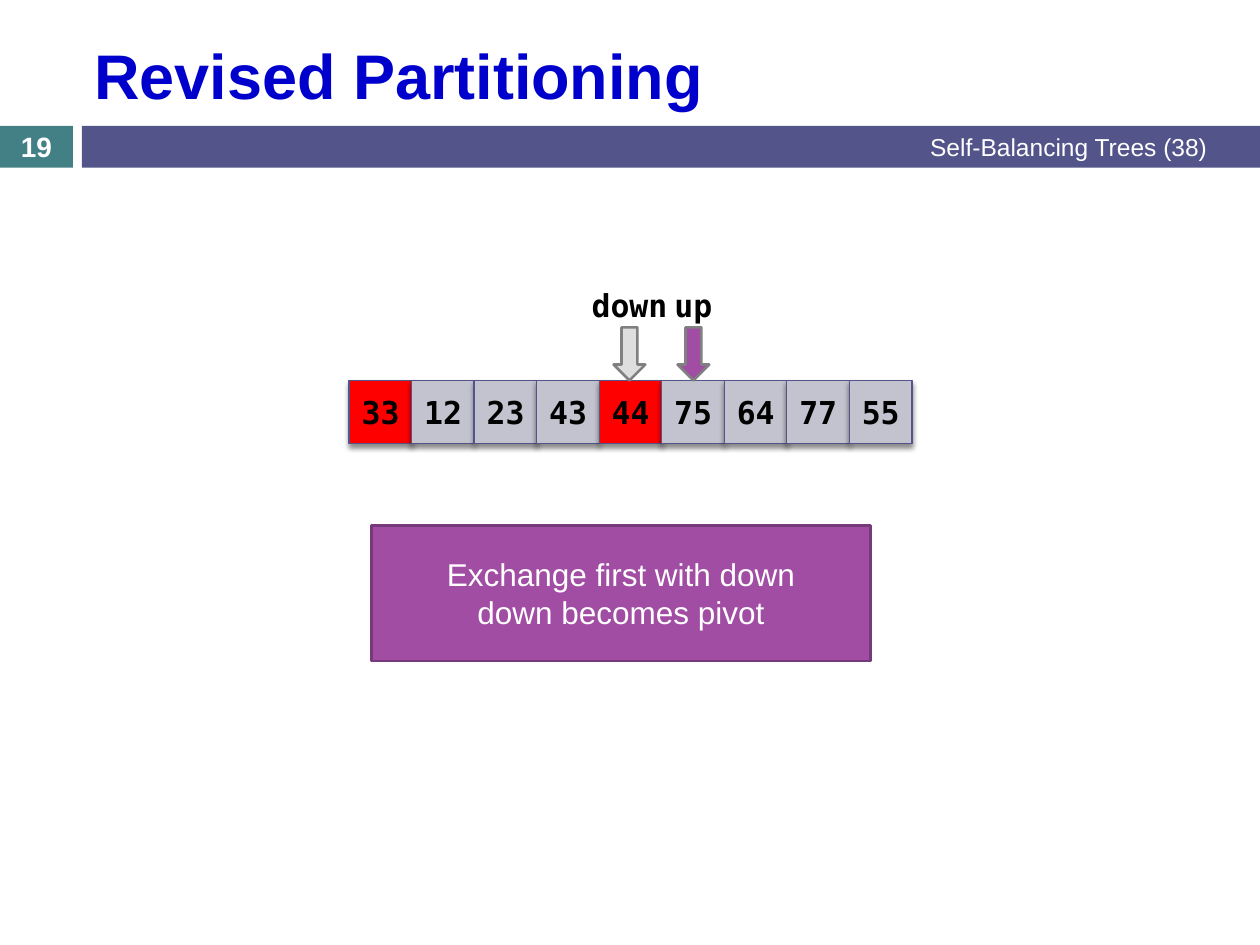
from dataclasses import dataclass

from lxml import etree
from pptx import Presentation
from pptx.dml.color import RGBColor
from pptx.enum.shapes import MSO_SHAPE
from pptx.enum.text import MSO_ANCHOR, MSO_AUTO_SIZE, PP_ALIGN
from pptx.oxml.ns import qn
from pptx.util import Cm, Pt

RECTANGLE, DOWN_ARROW = MSO_SHAPE.RECTANGLE, MSO_SHAPE.DOWN_ARROW
LEFT, CENTER, RIGHT = PP_ALIGN.LEFT, PP_ALIGN.CENTER, PP_ALIGN.RIGHT
TOP, MIDDLE = MSO_ANCHOR.TOP, MSO_ANCHOR.MIDDLE
NO_AUTOFIT = MSO_AUTO_SIZE.NONE


@dataclass(frozen=True)
class Theme:
    """Colours, fonts, type sizes and text formats of the slide."""
    teal: str = "438086"
    indigo: str = "53548A"
    red: str = "FF0000"
    cell: str = "C3C3CF"
    purple: str = "A04DA3"
    dark_purple: str = "763979"
    silver: str = "DEDEDE"
    gray: str = "808080"
    title = {"name": "Arial", "size": Pt(36), "bold": True, "color": "0000CC"}
    number = {"name": "Arial", "size": Pt(16), "bold": True, "color": "FFFFFF"}
    footer = {"name": "Arial", "size": Pt(14), "bold": False, "color": "FFFFFF"}
    message = {"name": "Arial", "size": Pt(18), "bold": False, "color": "FFFFFF"}
    code = {"name": "DejaVu Sans Mono", "size": Pt(18), "bold": True, "color": "000000"}


THEME = Theme()
VALUES = [33, 12, 23, 43, 44, 75, 64, 77, 55]
HIGHLIGHTED = {33, 44}
ROW_LEFT, ROW_TOP, CELL_SIZE, CELL_PITCH = 7.04, 7.67, 1.27, 1.26


def box(*lengths):
    """Convert left, top, width and height in centimetres to lengths."""
    return [Cm(length) for length in lengths]


def write(shape, lines, text_format, alignment=CENTER, anchor=MIDDLE, margin=0.25):
    """Fill a shape with one formatted paragraph per line."""
    frame = shape.text_frame
    frame.text = "\n".join(lines)
    settings = {"word_wrap": True, "auto_size": NO_AUTOFIT, "vertical_anchor": anchor,
                "margin_left": Cm(margin), "margin_right": Cm(margin)}
    for name, value in settings.items():
        setattr(frame, name, value)
    for paragraph in frame.paragraphs:
        paragraph.alignment = alignment
        font = paragraph.runs[0].font
        for name, value in text_format.items():
            if name == "color":
                font.color.rgb = RGBColor.from_string(value)
            else:
                setattr(font, name, value)


def add_block(shapes, kind, place, fill, line=None, line_width=1.5):
    """Add a flat filled shape, outlined when a line colour is given."""
    shape = shapes.add_shape(kind, *box(*place))
    shape.shadow.inherit = False
    shape.fill.solid()
    shape.fill.fore_color.rgb = RGBColor.from_string(fill)
    if line:
        shape.line.color.rgb = RGBColor.from_string(line)
        shape.line.width = Pt(line_width)
    else:
        shape.line.fill.background()
    return shape


def add_label(shapes, place, text, text_format, **layout):
    """Add a text box with one line of text."""
    write(shapes.add_textbox(*box(*place)), [text], text_format, **layout)


def add_shadow(shape):
    """Give a shape a soft black shadow straight below it."""
    effects = shape._element.spPr.find(qn("a:effectLst"))
    shadow = etree.SubElement(effects, qn("a:outerShdw"), blurRad=str(Pt(3)),
                              dist=str(Pt(2.4)), dir="5400000", rotWithShape="0")
    color = etree.SubElement(shadow, qn("a:srgbClr"), val="000000")
    etree.SubElement(color, qn("a:alpha"), val="45000")


def add_array(slide):
    """Add the row of array cells as one group."""
    shapes = slide.shapes.add_group_shape().shapes
    for index, value in enumerate(VALUES):
        place = (ROW_LEFT + index * CELL_PITCH, ROW_TOP, CELL_SIZE, CELL_SIZE)
        fill = THEME.red if value in HIGHLIGHTED else THEME.cell
        cell = add_block(shapes, RECTANGLE, place, fill, THEME.indigo, 0.79)
        add_shadow(cell)
        write(cell, [str(value)], THEME.code, margin=0)


def add_pointer(slide, text, center, fill):
    """Add a labelled arrow that points down at the array."""
    shapes = slide.shapes.add_group_shape().shapes
    add_block(shapes, DOWN_ARROW, (center - 0.32, 6.6, 0.64, 1.07), fill, THEME.gray)
    add_label(shapes, (center - 1.05, 5.64, 2.1, 1.02), text, THEME.code,
              anchor=TOP, margin=0.2)


def add_title(slide, text):
    """Place and format the title placeholder."""
    title = slide.shapes.title
    title.left, title.top, title.width, title.height = box(1.65, 0.48, 22.66, 2.03)
    write(title, [text], THEME.title, alignment=LEFT)


def add_header_band(slide):
    """Add the two bars with the slide number and the course topic."""
    number_bar = add_block(slide.shapes, RECTANGLE, (0, 2.54, 1.47, 0.84), THEME.teal)
    write(number_bar, ["19"], THEME.number, margin=0)
    add_block(slide.shapes, RECTANGLE, (1.65, 2.54, 23.75, 0.84), THEME.indigo)
    add_label(slide.shapes, (9.53, 2.51, 15.06, 0.89), "Self-Balancing Trees (38)",
              THEME.footer, alignment=RIGHT)


def main():
    """Build the slide and save it."""
    presentation = Presentation()
    presentation.slide_width, presentation.slide_height = Cm(25.4), Cm(19.05)
    slide = presentation.slides.add_slide(presentation.slide_layouts[5])
    add_header_band(slide)
    add_title(slide, "Revised Partitioning")
    add_array(slide)
    message = add_block(slide.shapes, RECTANGLE, (7.49, 10.59, 10.06, 2.74),
                        THEME.purple, THEME.dark_purple)
    write(message, ["Exchange first with down", "down becomes pivot"], THEME.message)
    add_pointer(slide, "up", 13.98, THEME.purple)
    add_pointer(slide, "down", 12.69, THEME.silver)
    presentation.save("out.pptx")


if __name__ == "__main__":
    main()
